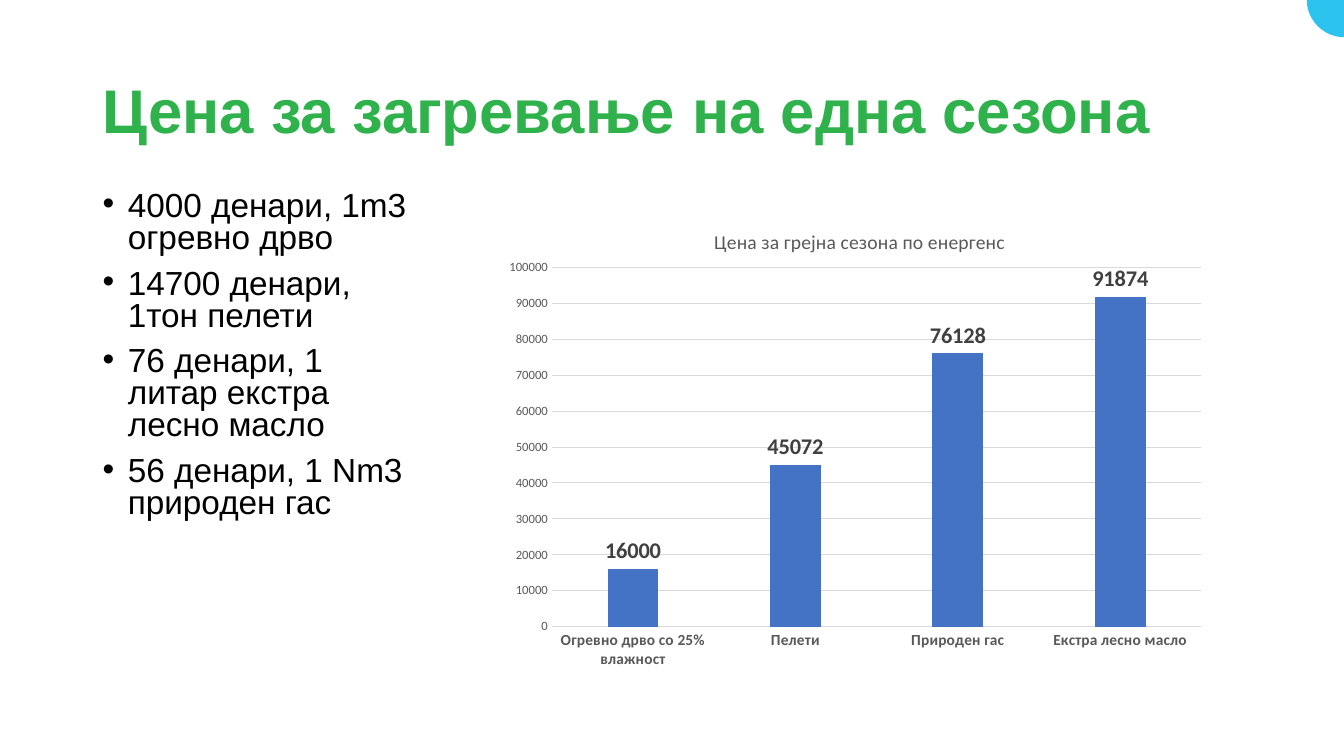
import pptx
import pptx.chart.data
import pptx.dml.color
import pptx.enum.chart
import pptx.enum.shapes
import pptx.enum.text
import pptx.oxml
import pptx.oxml.ns
import pptx.util
from pptx.util import Inches

# Content
TITLE = "Цена за загревање на една сезона"
PRICES = [
    "4000 денари, 1m3 огревно дрво",
    "14700 денари, 1тон пелети",
    "76 денари, 1 литар екстра лесно масло",
    "56 денари, 1 Nm3 природен гас",
]
CHART_TITLE = "Цена за грејна сезона по енергенс"
SEASON_COSTS = {
    "Огревно дрво со 25% влажност": 16000,
    "Пелети": 45072,
    "Природен гас": 76128,
    "Екстра лесно масло": 91874,
}
GREEN, CYAN, BLUE = "2FB24B", "2DC3EF", "4472C4"
BLACK, LABEL_GRAY, TEXT_GRAY, LINE_GRAY = "000000", "404040", "595959", "D9D9D9"


def color(value):
    return pptx.dml.color.RGBColor.from_string(value)


def style_font(font, name, size, value, bold=False):
    font.name = name
    font.size = pptx.util.Pt(size)
    font.color.rgb = color(value)
    font.bold = bold


def add_text_frame(slide, left, top, width, height, anchor):
    frame = slide.shapes.add_textbox(*map(Inches, (left, top, width, height))).text_frame
    frame.word_wrap = True
    frame.vertical_anchor = anchor
    return frame


def add_bullet(paragraph, indent):
    properties = paragraph._p.get_or_add_pPr()
    properties.set("marL", str(Inches(indent)))
    properties.set("indent", str(-Inches(indent)))
    namespace = pptx.oxml.ns.nsdecls("a")
    properties.append(pptx.oxml.parse_xml(f'<a:buFont {namespace} typeface="Arial"/>'))
    properties.append(pptx.oxml.parse_xml(f'<a:buChar {namespace} char="•"/>'))


def set_layout(element, index, inner=False, **fractions):
    """Place a chart part by fractions of the chart area."""
    for layout in element.findall(pptx.oxml.ns.qn("c:layout")):
        element.remove(layout)
    target = '<c:layoutTarget val="inner"/>' if inner else ""
    modes = "".join(f'<c:{key}Mode val="edge"/>' for key in "xy")
    values = "".join(f'<c:{key} val="{value}"/>' for key, value in fractions.items())
    element.insert(index, pptx.oxml.parse_xml(
        f'<c:layout {pptx.oxml.ns.nsdecls("c")}><c:manualLayout>'
        f"{target}{modes}{values}</c:manualLayout></c:layout>"))


presentation = pptx.Presentation()
presentation.slide_width = Inches(13.33)
presentation.slide_height = Inches(7.5)
slide = presentation.slides.add_slide(presentation.slide_layouts[6])

# Corner circle
circle = slide.shapes.add_shape(
    pptx.enum.shapes.MSO_SHAPE.OVAL, Inches(12.96), Inches(-0.38), Inches(0.75), Inches(0.75))
circle.shadow.inherit = False
circle.fill.solid()
circle.fill.fore_color.rgb = color(CYAN)
circle.line.fill.background()

# Title
anchors = pptx.enum.text.MSO_ANCHOR
paragraph = add_text_frame(slide, 0.92, 0.4, 11.5, 1.45, anchors.MIDDLE).paragraphs[0]
paragraph.line_spacing = 0.9
run = paragraph.add_run()
run.text = TITLE
style_font(run.font, "Arial", 44, GREEN, True)

# Fuel prices
frame = add_text_frame(slide, 0.92, 1.85, 3.33, 3.72, anchors.TOP)
for number, price in enumerate(PRICES):
    paragraph = frame.add_paragraph() if number else frame.paragraphs[0]
    paragraph.line_spacing = 0.8
    paragraph.space_before = pptx.util.Pt(10)
    add_bullet(paragraph, 0.25)
    run = paragraph.add_run()
    run.text = price
    style_font(run.font, "Arial", 23.8, BLACK)

# Season cost chart
data = pptx.chart.data.CategoryChartData()
data.categories = list(SEASON_COSTS)
data.add_series("Series 1", list(SEASON_COSTS.values()))
chart = slide.shapes.add_chart(
    pptx.enum.chart.XL_CHART_TYPE.COLUMN_CLUSTERED,
    Inches(4.9), Inches(1.99), Inches(7.16), Inches(4.75), data).chart
style_font(chart.font, "Calibri", 10, BLACK)
chart.has_legend = False
chart.has_title = True
run = chart.chart_title.text_frame.paragraphs[0].add_run()
run.text = CHART_TITLE
style_font(run.font, "Calibri", 14, TEXT_GRAY)
set_layout(chart.chart_title.element, 1, x=0.3, y=0.05)
plot_area = chart.element.find(".//" + pptx.oxml.ns.qn("c:plotArea"))
set_layout(plot_area, 0, inner=True, x=0.08, y=0.14, w=0.9, h=0.75)

# Columns and labels
plot = chart.plots[0]
plot.vary_by_categories = False
plot.gap_width = 219
plot.overlap = -27
series = plot.series[0]
series.format.fill.solid()
series.format.fill.fore_color.rgb = color(BLUE)
labels = series.data_labels
labels.show_value = True
labels.position = pptx.enum.chart.XL_LABEL_POSITION.OUTSIDE_END
style_font(labels.font, "Calibri", 16, LABEL_GRAY, True)

# Axes
for axis, size, bold in ((chart.category_axis, 11, True), (chart.value_axis, 9, False)):
    axis.major_tick_mark = axis.minor_tick_mark = pptx.enum.chart.XL_TICK_MARK.NONE
    style_font(axis.tick_labels.font, "Calibri", size, TEXT_GRAY, bold)
chart.value_axis.minimum_scale = 0
chart.value_axis.maximum_scale = 100000
chart.value_axis.major_unit = 10000
chart.value_axis.format.line.fill.background()
for line in (chart.category_axis.format.line, chart.value_axis.major_gridlines.format.line):
    line.color.rgb = color(LINE_GRAY)
    line.width = pptx.util.Pt(0.75)

presentation.save("out.pptx")
